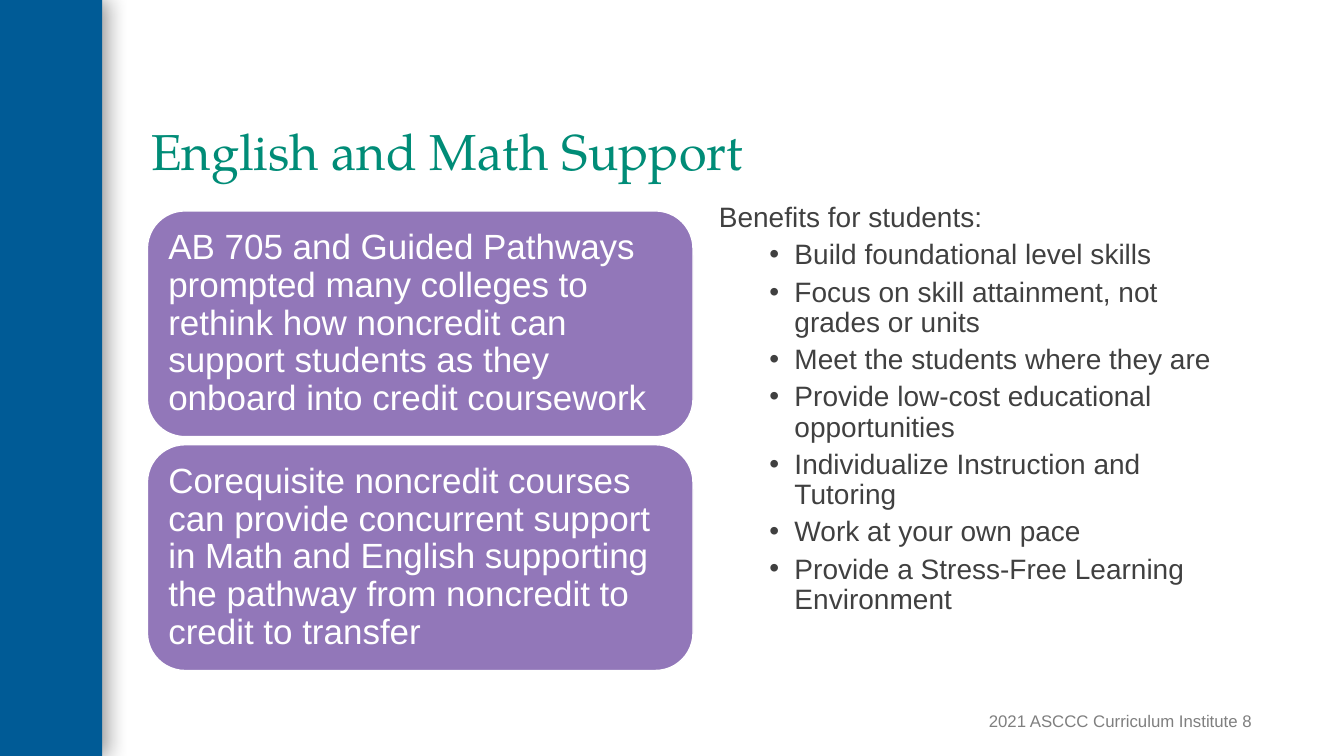
import lxml.etree
import pptx
import pptx.dml.color
import pptx.enum.shapes
import pptx.enum.text
import pptx.oxml.ns
import pptx.util

SHAPES = pptx.enum.shapes.MSO_SHAPE
ANCHOR = pptx.enum.text.MSO_ANCHOR
ALIGN = pptx.enum.text.PP_ALIGN


def color(hex_code):
    """Turn a hex string into a colour."""
    return pptx.dml.color.RGBColor.from_string(hex_code)


class SlideBuilder:
    """Hold the style and the current slide; places are percentages of the slide."""

    body_font = "Arial"
    title_font = "TeX Gyre Pagella"
    blue, purple, green = "005B96", "9277B9", "008C77"
    dark, gray, white = "404040", "7F7F7F", "FFFFFF"

    def __init__(self, deck):
        """Add a title-only slide to the deck."""
        self.deck = deck
        self.slide = deck.slides.add_slide(deck.slide_layouts[5])

    def place(self, left, top, width, height):
        """Convert percentages into slide lengths."""
        across, down = self.deck.slide_width, self.deck.slide_height
        shares = ((left, across), (top, down), (width, across), (height, down))
        return [round(share * size / 100) for share, size in shares]

    def frame(self, holder, anchor, insets=(0.1, 0.05, 0.1, 0.05)):
        """Prepare the text frame of a shape."""
        frame = holder.text_frame
        frame.word_wrap = True
        frame.auto_size = pptx.enum.text.MSO_AUTO_SIZE.NONE
        frame.vertical_anchor = anchor
        (frame.margin_left, frame.margin_top, frame.margin_right,
         frame.margin_bottom) = map(pptx.util.Inches, insets)
        return frame

    def add_words(self, paragraph, words, size, ink, font=body_font, align=ALIGN.LEFT, spacing=0.9):
        """Add one run to a paragraph."""
        paragraph.alignment = align
        paragraph.line_spacing = spacing
        run = paragraph.add_run()
        run.text = words
        run.font.name = font
        run.font.size = pptx.util.Pt(size)
        run.font.color.rgb = color(ink)

    def title(self, words, *box):
        """Fill and move the title placeholder."""
        heading = self.slide.shapes.title
        heading.left, heading.top, heading.width, heading.height = self.place(*box)
        frame = self.frame(heading, ANCHOR.BOTTOM)
        self.add_words(frame.paragraphs[0], words, 36, self.green, self.title_font)

    def sidebar(self, *box):
        """Draw the side band with a soft shadow to its right."""
        band = self.slide.shapes.add_shape(SHAPES.RECTANGLE, *self.place(*box))
        band.fill.solid()
        band.fill.fore_color.rgb = color(self.blue)
        band.line.fill.background()
        band.shadow.inherit = False
        effects = band.element.spPr.find(pptx.oxml.ns.qn("a:effectLst"))
        shadow = lxml.etree.SubElement(
            effects, pptx.oxml.ns.qn("a:outerShdw"), blurRad=str(pptx.util.Pt(15)),
            dist=str(pptx.util.Pt(3)), dir="0", algn="l", rotWithShape="0")
        tint = lxml.etree.SubElement(shadow, pptx.oxml.ns.qn("a:srgbClr"), val="000000")
        lxml.etree.SubElement(tint, pptx.oxml.ns.qn("a:alpha"), val="40000")

    def card(self, words, *box):
        """Draw a rounded card with its statement."""
        card = self.slide.shapes.add_shape(SHAPES.ROUNDED_RECTANGLE, *self.place(*box))
        card.fill.solid()
        card.fill.fore_color.rgb = color(self.purple)
        card.line.color.rgb = color(self.white)
        card.line.width = pptx.util.Pt(1)
        card.shadow.inherit = False
        frame = self.frame(card, ANCHOR.MIDDLE, (0.1, 0.1, 0.1, 0.1))
        self.add_words(frame.paragraphs[0], words, 25, self.white)

    def bullet_list(self, lead, points, *box):
        """Set a lead line and its bulleted points."""
        holder = self.slide.shapes.add_textbox(*self.place(*box))
        frame = self.frame(holder, ANCHOR.TOP)
        self.add_words(frame.paragraphs[0], lead, 20, self.dark)
        for point in points:
            paragraph = frame.add_paragraph()
            paragraph.level = 1
            settings = paragraph._p.get_or_add_pPr()
            settings.set("marL", str(pptx.util.Inches(0.75)))
            settings.set("indent", str(pptx.util.Inches(-0.25)))
            lxml.etree.SubElement(settings, pptx.oxml.ns.qn("a:buFont"), typeface=self.body_font)
            lxml.etree.SubElement(settings, pptx.oxml.ns.qn("a:buChar"), char="•")
            paragraph.space_before = pptx.util.Pt(5)
            self.add_words(paragraph, point, 20, self.dark)

    def footer(self, words, *box):
        """Set the right-aligned footer."""
        holder = self.slide.shapes.add_textbox(*self.place(*box))
        frame = self.frame(holder, ANCHOR.MIDDLE, (0.1, 0.05, 0, 0.05))
        self.add_words(frame.paragraphs[0], words, 12, self.gray, align=ALIGN.RIGHT, spacing=1.0)


STATEMENTS = [
    "AB 705 and Guided Pathways prompted many colleges to rethink how noncredit can "
    "support students as they onboard into credit coursework",
    "Corequisite noncredit courses can provide concurrent support in Math and English "
    "supporting the pathway from noncredit to credit to transfer",
]
BENEFITS = [
    "Build foundational level skills",
    "Focus on skill attainment, not grades or units",
    "Meet the students where they are",
    "Provide low-cost educational opportunities",
    "Individualize Instruction and Tutoring",
    "Work at your own pace",
    "Provide a Stress-Free Learning Environment",
]


def main():
    """Build and save the slide."""
    deck = pptx.Presentation()
    deck.slide_width = pptx.util.Inches(13.33)
    deck.slide_height = pptx.util.Inches(7.5)
    support = SlideBuilder(deck)
    support.sidebar(0, 0, 7.6, 100)
    for row, statement in enumerate(STATEMENTS):
        support.card(statement, 10.97, 27.9 + 30.93 * row, 40.6, 29.87)
    support.title("English and Math Support", 10.5, 5.33, 82.45, 19.33)
    support.bullet_list("Benefits for students:", BENEFITS, 52.75, 26.27, 40.36, 64)
    support.footer("2021 ASCCC Curriculum Institute 8", 71.64, 92.67, 21.53, 5.33)
    deck.save("out.pptx")


if __name__ == "__main__":
    main()
